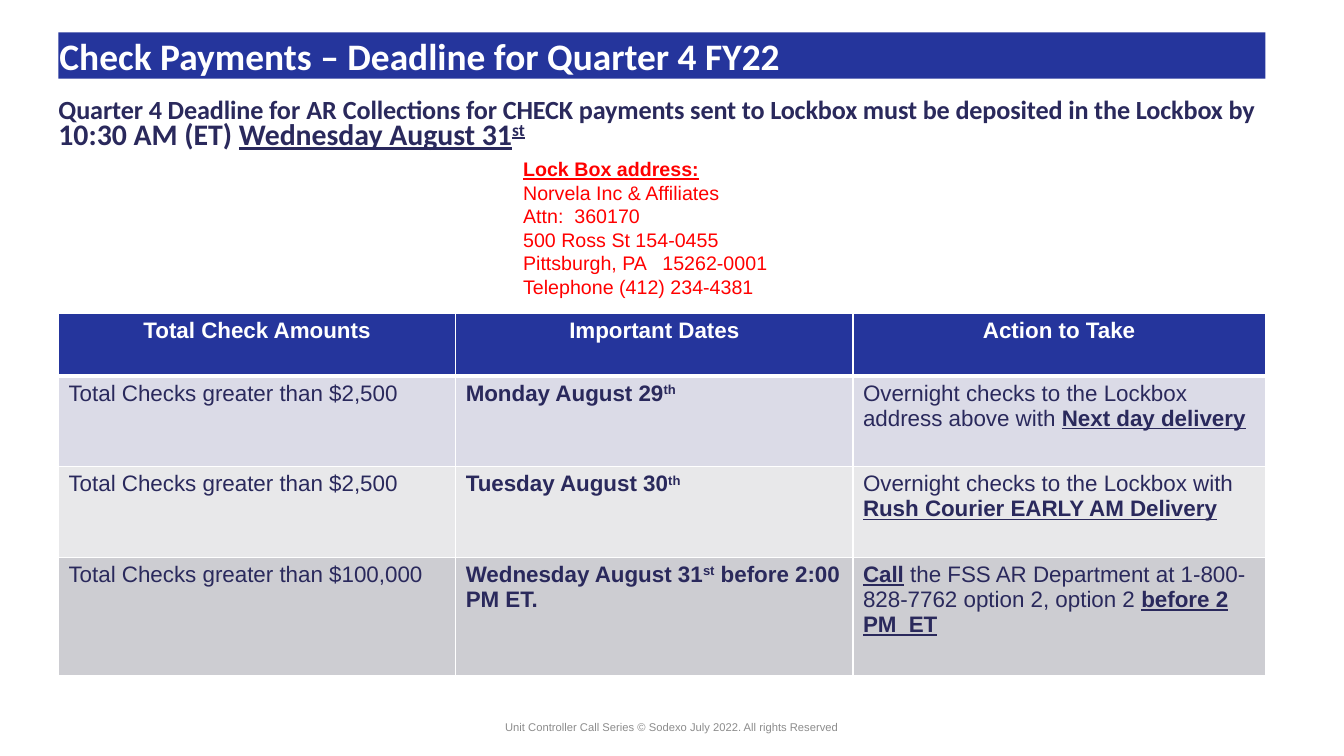
from pptx import Presentation
from pptx.util import Inches, Pt
from pptx.dml.color import RGBColor
from pptx.enum.text import PP_ALIGN as Align, MSO_ANCHOR as Anchor, MSO_AUTO_SIZE as Fit
from pptx.oxml.ns import qn
from lxml.etree import SubElement as Sub

HUES = {"blue": "25359C", "navy": "2A295C", "white": "FFFFFF", "red": "FF0000",
        "gray": "8C8C8C", "lilac": "DBDBE7", "pale": "E8E8EA", "ash": "CDCDD2"}

BOLD = {"bold": True}
LINE = {"bold": True, "under": True}
RAISE = {"bold": True, "base": 30}

ADDRESS = ["Norvela Inc & Affiliates", "Attn:  360170", "500 Ross St 154-0455",
           "Pittsburgh, PA   15262-0001", "Telephone (412) 234-4381"]
HEADS = ["Total Check Amounts", "Important Dates", "Action to Take"]

# Each row: fill, height, then three cells made of (text, format) runs
ROWS = [
    ("lilac", 0.9, [
        [("Total Checks greater than $2,500", {})],
        [("Monday August 29", BOLD), ("th", RAISE)],
        [("Overnight checks to the Lockbox address above with ", {}),
         ("Next day delivery", LINE)]]),
    ("pale", 0.9, [
        [("Total Checks greater than $2,500", {})],
        [("Tuesday August 30", BOLD), ("th", RAISE)],
        [("Overnight checks to the Lockbox with ", {}),
         ("Rush Courier EARLY AM Delivery", LINE)]]),
    ("ash", 1.17, [
        [("Total Checks greater than $100,000", {})],
        [("Wednesday August 31", BOLD), ("st", RAISE), (" before 2:00 PM ET.", BOLD)],
        [("Call", LINE),
         (" the FSS AR Department at 1-800-828-7762 option 2, option 2 ", {}),
         ("before 2 PM  ET", LINE)]]),
]


def color(name):
    return RGBColor.from_string(HUES[name])


def paint(item, name):
    item.fill.solid()
    item.fill.fore_color.rgb = color(name)


def write(para, text, size=16, face="Arial", hue="navy", bold=False,
          under=False, base=0, track=0):
    run = para.add_run()
    run.text = text
    font = run.font
    font.size, font.name, font.bold, font.underline = Pt(size), face, bold, under
    font.color.rgb = color(hue)
    props = run._r.get_or_add_rPr()
    if base:
        props.set("baseline", str(base * 1000))
    if track:
        props.set("spc", str(track))


def place(shape, box):
    shape.left, shape.top, shape.width, shape.height = map(Inches, box)


def frame(shape, pads=(0, 0.01, 0, 0), anchor=Anchor.TOP):
    area = shape.text_frame
    area.word_wrap = True
    area.auto_size = Fit.NONE
    area.vertical_anchor = anchor
    area.margin_left, area.margin_top, area.margin_right, area.margin_bottom = map(Inches, pads)
    return area


# Title bar
def title(slide, box):
    shape = slide.shapes.title
    place(shape, box)
    paint(shape, "blue")
    para = frame(shape, (0.01, 0.01, 0, 0)).paragraphs[0]
    para.alignment = Align.LEFT
    write(para, "Check Payments – Deadline for Quarter 4 FY22",
          size=26.7, face="Calibri", hue="white", bold=True)


# Deadline statement
def lead(slide, box):
    shape = slide.placeholders[1]
    place(shape, box)
    paint(shape, "white")
    para = frame(shape).paragraphs[0]
    props = para._p.get_or_add_pPr()
    props.set("marL", "0")
    props.set("indent", "0")
    Sub(props, qn("a:buNone"))
    para.space_before = Pt(0)
    para.line_spacing = Pt(19.1)
    for text, style in [
            ("Quarter 4 Deadline ", {"track": -10}),
            ("for AR ", {}),
            ("Collections for CHECK payments sent to Lockbox must be "
             "deposited in the Lockbox by ", {"track": -10}),
            ("10:30 AM (ET) ", {"size": 21.3}),
            ("Wednesday August 31", {"size": 21.3, "under": True}),
            ("st", {"size": 21.3, "under": True, "base": 30})]:
        write(para, text, **{"size": 18.7, "face": "Calibri", "bold": True, **style})


# Mailing address
def mail(slide, box):
    area = frame(slide.shapes.add_textbox(*map(Inches, box)), (0.1, 0.05, 0.1, 0.05))
    write(area.paragraphs[0], "Lock Box address:", size=14, hue="red", **LINE)
    for text in ADDRESS:
        write(area.add_paragraph(), text, size=14, hue="red")


def edge(cell, top, foot):
    props = cell._tc.get_or_add_tcPr()
    for side, width in (("L", 1), ("R", 1), ("T", top), ("B", foot)):
        line = Sub(props, qn("a:ln" + side), w=str(Pt(width)))
        Sub(Sub(line, qn("a:solidFill")), qn("a:srgbClr"), val=HUES["white"])


# Table of dates
def dates(slide, box):
    style = {"hue": "white", "bold": True}
    rows = [("blue", 0.62, [[(head, style)] for head in HEADS])] + ROWS
    table = slide.shapes.add_table(len(rows), len(HEADS), *map(Inches, box)).table
    for col, width in zip(table.columns, (3.94, 3.94, box[2] - 2 * 3.94)):
        col.width = Inches(width)
    for r, (fill, height, cells) in enumerate(rows):
        table.rows[r].height = Inches(height)
        for c, runs in enumerate(cells):
            cell = table.cell(r, c)
            edge(cell, 3 if r == 1 else 1, 3 if r == 0 else 1)
            paint(cell, fill)
            para = cell.text_frame.paragraphs[0]
            para.alignment = Align.CENTER if r == 0 else Align.LEFT
            for text, form in runs:
                write(para, text, **form)


# Copyright line
def foot(slide, box):
    shape = slide.shapes.add_textbox(*map(Inches, box))
    para = frame(shape, (0, 0, 0, 0), Anchor.BOTTOM).paragraphs[0]
    para.alignment = Align.CENTER
    write(para, "Unit Controller Call Series © Sodexo July 2022. All rights Reserved",
          size=8, hue="gray")


def main():
    deck = Presentation()
    deck.slide_width, deck.slide_height = Inches(13.33), Inches(7.5)
    slide = deck.slides.add_slide(deck.slide_layouts[1])
    left, width = 0.58, 11.97
    title(slide, (left, 0.32, width, 0.46))
    lead(slide, (left, 0.96, width, 0.56))
    mail(slide, (5.09, 1.51, 2.73, 1.51))
    dates(slide, (left, 3.11, width, 3.59))
    foot(slide, (4.53, 6.98, 4.27, 0.3))
    deck.save("out.pptx")


if __name__ == "__main__":
    main()
